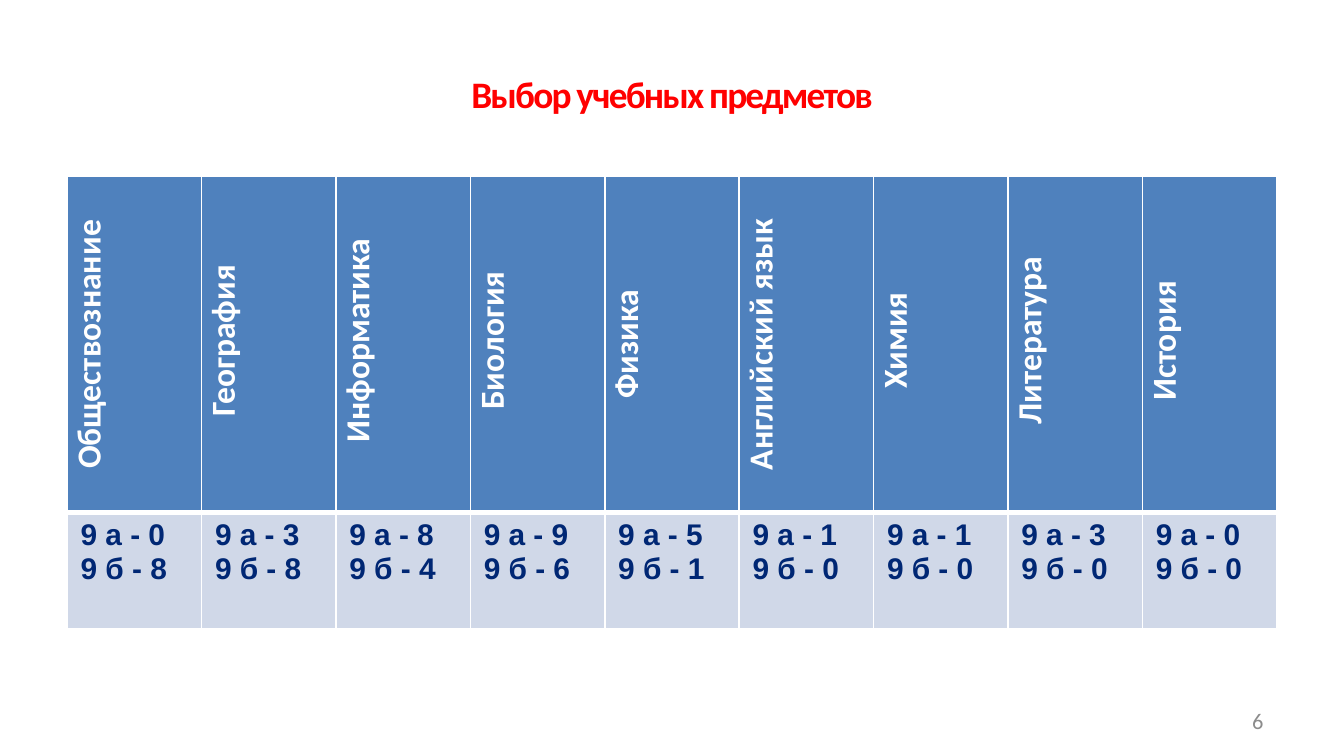
from dataclasses import dataclass

from lxml.etree import SubElement
from pptx import Presentation
from pptx.dml.color import RGBColor
from pptx.enum.text import MSO_ANCHOR as Anchor, PP_ALIGN as Align
from pptx.oxml.ns import qn
from pptx.table import _Cell as Cell
from pptx.text.text import TextFrame
from pptx.util import Pt

EMU_PER_PX = 9525
COLORS = {
    "title": "FF0000",
    "header": "4F81BD",
    "header_text": "FFFFFF",
    "body": "D0D8E8",
    "body_text": "002774",
    "border": "FFFFFF",
    "number": "8C8C8C",
}


@dataclass(frozen=True)
class Subject:
    name: str
    class_a: int
    class_b: int


@dataclass(frozen=True)
class TextStyle:
    font: str
    size: int
    color: str
    bold: bool
    align: Align


SUBJECTS = [
    Subject("Обществознание", 0, 8),
    Subject(" География", 3, 8),
    Subject(" Информатика", 8, 4),
    Subject(" Биология", 9, 6),
    Subject("Физика", 5, 1),
    Subject("Английский язык", 1, 0),
    Subject(" Химия", 1, 0),
    Subject(" Литература", 3, 0),
    Subject(" История", 0, 0),
]
TITLE_STYLE = TextStyle("Calibri", 20, "title", True, Align.CENTER)
HEADER_STYLE = TextStyle("Calibri", 18, "header_text", True, Align.CENTER)
BODY_STYLE = TextStyle("Arial", 16, "body_text", True, Align.LEFT)
NUMBER_STYLE = TextStyle("Calibri", 12, "number", False, Align.RIGHT)
HEADER_FORMAT = {
    "margin_left": 1,
    "margin_top": 1,
    "margin_right": 1,
    "margin_bottom": 0,
}
TITLE_BOX = {"left": 48, "top": 22, "width": 864, "height": 90}
NUMBER_BOX = (688, 500, 224, 29)
TABLE_LEFT, TABLE_TOP = 48, 126
COLUMN_WIDTH = 96
ROW_HEIGHTS = (240, 83)


def px(length: int) -> int:
    return length * EMU_PER_PX


def rgb(name: str) -> RGBColor:
    return RGBColor.from_string(COLORS[name])


def write(frame: TextFrame, text: str, style: TextStyle) -> None:
    frame.text = text
    for paragraph in frame.paragraphs:
        paragraph.alignment = style.align
        for run in paragraph.runs:
            font_format = {"name": style.font, "size": Pt(style.size), "bold": style.bold}
            for attribute, value in font_format.items():
                setattr(run.font, attribute, value)
            run.font.color.rgb = rgb(style.color)


def paint(cell: Cell, fill: str, bottom_width: int) -> None:
    properties = cell._tc.get_or_add_tcPr()
    for side, width in {"L": 1, "R": 1, "T": 1, "B": bottom_width}.items():
        line = SubElement(properties, qn(f"a:ln{side}"), w=str(Pt(width)))
        solid = SubElement(line, qn("a:solidFill"))
        SubElement(solid, qn("a:srgbClr"), val=COLORS["border"])
    cell.fill.solid()
    cell.fill.fore_color.rgb = rgb(fill)


def fill_header(cell: Cell, subject: Subject) -> None:
    write(cell.text_frame, subject.name, HEADER_STYLE)
    paint(cell, "header", 3)
    for attribute, length in HEADER_FORMAT.items():
        setattr(cell, attribute, px(length))
    cell.vertical_anchor = Anchor.MIDDLE
    cell._tc.get_or_add_tcPr().set("vert", "vert270")


def fill_counts(cell: Cell, subject: Subject) -> None:
    counts = f"9 а - {subject.class_a}\n9 б - {subject.class_b}"
    write(cell.text_frame, counts, BODY_STYLE)
    paint(cell, "body", 1)


def main() -> None:
    deck = Presentation()
    deck.slide_width, deck.slide_height = px(960), px(540)
    slide = deck.slides.add_slide(deck.slide_layouts[5])

    title = slide.shapes.title
    for attribute, length in TITLE_BOX.items():
        setattr(title, attribute, px(length))
    write(title.text_frame, "Выбор учебных предметов", TITLE_STYLE)
    title.text_frame.vertical_anchor = Anchor.MIDDLE
    title.text_frame.paragraphs[0].runs[0]._r.get_or_add_rPr().set("spc", "-100")

    page_number = slide.shapes.add_textbox(*map(px, NUMBER_BOX)).text_frame
    page_number.word_wrap = True
    page_number.vertical_anchor = Anchor.MIDDLE
    write(page_number, "6", NUMBER_STYLE)

    choices = slide.shapes.add_table(
        len(ROW_HEIGHTS), len(SUBJECTS), px(TABLE_LEFT), px(TABLE_TOP),
        px(COLUMN_WIDTH * len(SUBJECTS)), px(sum(ROW_HEIGHTS)),
    ).table
    choices.horz_banding = False
    for row, height in zip(choices.rows, ROW_HEIGHTS):
        row.height = px(height)
    for index, subject in enumerate(SUBJECTS):
        choices.columns[index].width = px(COLUMN_WIDTH)
        fill_header(choices.cell(0, index), subject)
        fill_counts(choices.cell(1, index), subject)

    deck.save("out.pptx")


if __name__ == "__main__":
    main()
